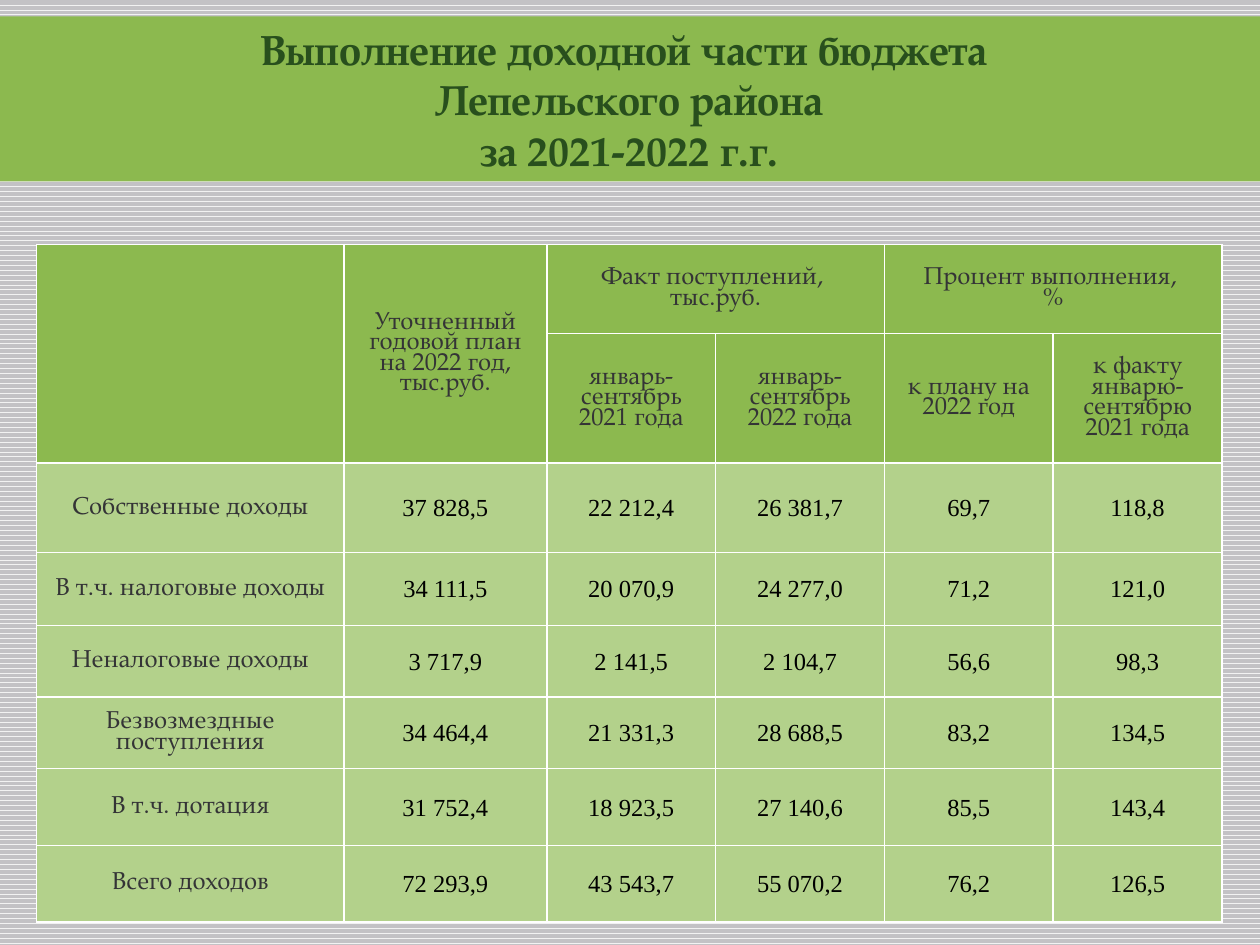
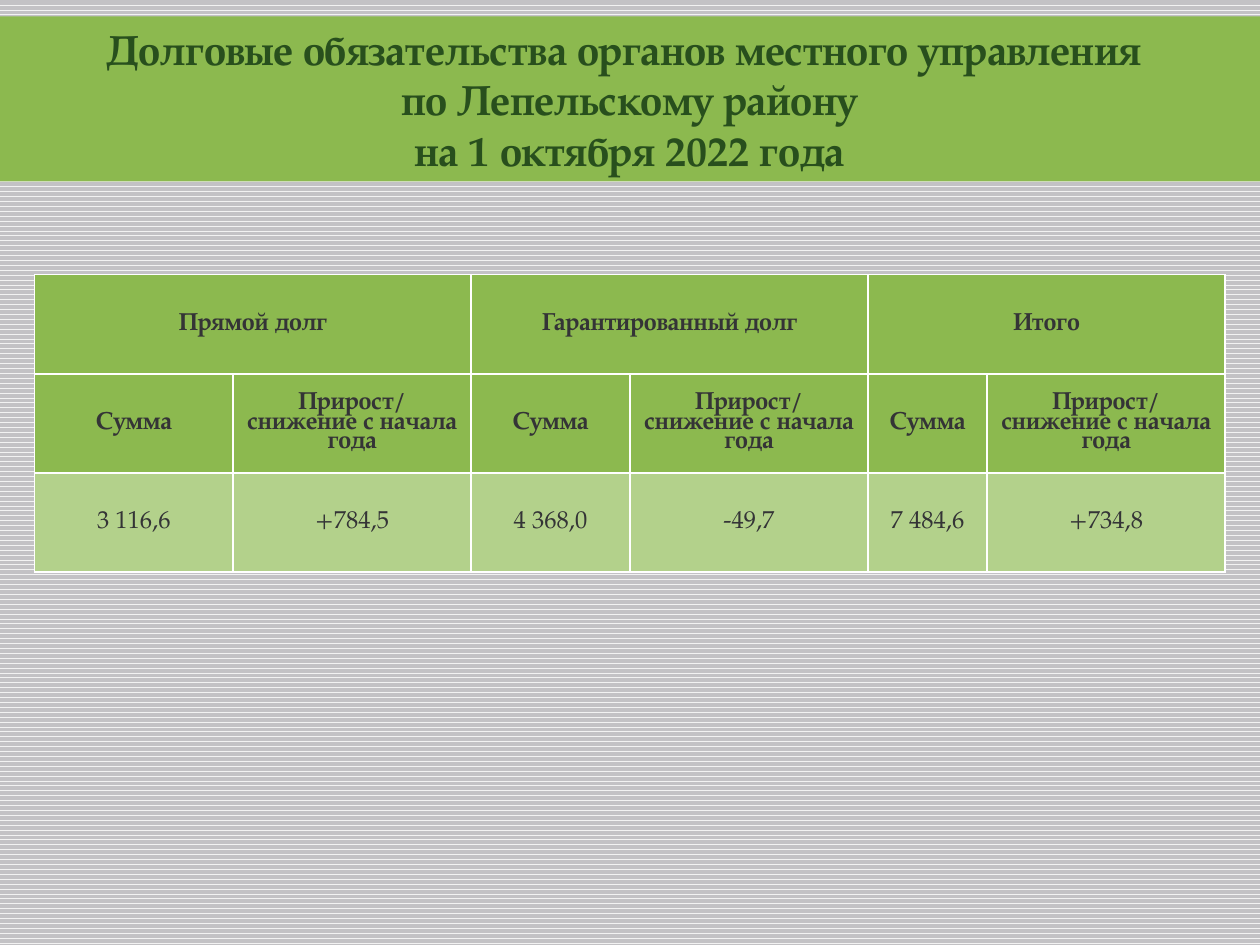
from collections import namedtuple

from lxml.etree import SubElement
from pptx import Presentation
from pptx.dml.color import RGBColor
from pptx.enum.dml import MSO_PATTERN
from pptx.enum.shapes import MSO_SHAPE
from pptx.enum.text import MSO_ANCHOR, MSO_AUTO_SIZE, PP_ALIGN
from pptx.oxml.ns import qn
from pptx.util import Inches, Pt

GREEN = RGBColor(0x8C, 0xB9, 0x4F)
LIGHT_GREEN = RGBColor(0xB3, 0xD1, 0x8B)
DARK_GREEN = RGBColor(0x28, 0x4F, 0x1D)
INK = RGBColor(0x34, 0x34, 0x36)
BLACK = RGBColor(0x00, 0x00, 0x00)
WHITE = RGBColor(0xFF, 0xFF, 0xFF)
STRIPE = RGBColor(0xF2, 0xF2, 0xF2)
GREY = RGBColor(0xC3, 0xC2, 0xC5)

SERIF = "TeX Gyre Pagella"
FIGURES = "Times New Roman"
WIDTH, HEIGHT = Inches(10), Inches(7.5)

Box = namedtuple("Box", "left top width height")


def share_box(left, top, width, height):
    return Box(int(left * WIDTH), int(top * HEIGHT),
               int(width * WIDTH), int(height * HEIGHT))


BANNER = share_box(-0.001, 0.0173, 1.001, 0.1747)
INCOME_BOX = share_box(0.029, 0.2587, 0.941, 0.7173)
DEBT_BOX = share_box(0.0275, 0.2907, 0.945, 0.3147)

INCOME_COLUMNS = [2.44, 1.61] + [1.34] * 4
INCOME_ROWS = [0.71, 1.03, 0.71, 0.58, 0.57, 0.57, 0.61, 0.61]
INCOME_HEADS = {
    (0, 0, 2, 1): "",
    (0, 1, 2, 1): "Уточненный годовой план на 2022 год, тыс.руб.",
    (0, 2, 1, 2): "Факт поступлений, \nтыс.руб.",
    (0, 4, 1, 2): "Процент выполнения, \n%",
    (1, 2, 1, 1): "январь-сентябрь 2021 года",
    (1, 3, 1, 1): "январь-сентябрь 2022 года",
    (1, 4, 1, 1): "к плану на 2022 год",
    (1, 5, 1, 1): "к факту январю-сентябрю 2021 года",
}
INCOME = [
    ("Собственные доходы", "37 828,5", "22 212,4", "26 381,7", "69,7", "118,8"),
    ("В т.ч. налоговые доходы", "34 111,5", "20 070,9", "24 277,0", "71,2", "121,0"),
    ("Неналоговые доходы", "3 717,9", "2 141,5", "2 104,7", "56,6", "98,3"),
    ("Безвозмездные поступления", "34 464,4", "21 331,3", "28 688,5", "83,2", "134,5"),
    ("В т.ч. дотация", "31 752,4", "18 923,5", "27 140,6", "85,5", "143,4"),
    ("Всего доходов", "72 293,9", "43 543,7", "55 070,2", "76,2", "126,5"),
]

DEBT_COLUMNS = [5, 6, 4, 6, 3, 6]
DEBT_ROWS = [1, 1, 1]
DEBT_KINDS = ["Прямой долг", "Гарантированный долг", "Итого"]
DEBT_MEASURES = ["Сумма", "Прирост/снижение с начала года"] * 3
DEBT = ["3 116,6", "+784,5", "4 368,0", "-49,7", "7 484,6", "+734,8"]


def write(frame, text, size=14, font=SERIF, color=INK, bold=False, spacing=None):
    frame.word_wrap = True
    for number, line in enumerate(text.split("\n")):
        paragraph = frame.add_paragraph() if number else frame.paragraphs[0]
        paragraph.alignment = PP_ALIGN.CENTER
        paragraph.line_spacing = spacing
        run = paragraph.add_run()
        run.text = line
        run.font.size = Pt(size)
        run.font.name = font
        run.font.bold = bold
        run.font.color.rgb = color


def add_striped_slide(deck):
    slide = deck.slides.add_slide(deck.slide_layouts[6])
    stripes = slide.background.fill
    stripes.patterned()
    stripes.pattern = MSO_PATTERN.WAVE
    stripes.fore_color.rgb = STRIPE
    stripes.back_color.rgb = GREY
    return slide


def place_banner(slide, box, heading):
    banner = slide.shapes.add_shape(MSO_SHAPE.RECTANGLE, *box)
    banner.shadow.inherit = False
    banner.fill.solid()
    banner.fill.fore_color.rgb = GREEN
    banner.line.fill.background()
    write(banner.text_frame, heading, size=24, color=DARK_GREEN, bold=True)
    banner.text_frame.vertical_anchor = MSO_ANCHOR.MIDDLE
    banner.text_frame.auto_size = MSO_AUTO_SIZE.SHAPE_TO_FIT_TEXT


def paint_cell(cell, color):
    properties = cell._tc.get_or_add_tcPr()
    for side in ("lnL", "lnR", "lnT", "lnB"):
        border = SubElement(properties, qn(f"a:{side}"), w=str(Pt(1)))
        fill = SubElement(border, qn("a:solidFill"))
        SubElement(fill, qn("a:srgbClr"), val=str(WHITE))
    cell.fill.solid()
    cell.fill.fore_color.rgb = color
    cell.vertical_anchor = MSO_ANCHOR.MIDDLE


def place_grid(slide, box, columns, rows, head_rows):
    grid = slide.shapes.add_table(len(rows), len(columns), *box).table
    for column, weight in zip(grid.columns, columns):
        column.width = int(box.width * weight / sum(columns))
    for number, (row, weight) in enumerate(zip(grid.rows, rows)):
        row.height = int(box.height * weight / sum(rows))
        for cell in row.cells:
            paint_cell(cell, GREEN if number < head_rows else LIGHT_GREEN)
    return grid


def place_income(slide, box):
    grid = place_grid(slide, box, INCOME_COLUMNS, INCOME_ROWS, head_rows=2)
    for (row, column, down, across), head in INCOME_HEADS.items():
        cell = grid.cell(row, column)
        if down * across > 1:
            cell.merge(grid.cell(row + down - 1, column + across - 1))
        if head:
            write(cell.text_frame, head, spacing=0.83)
    for row, (source, *amounts) in enumerate(INCOME, start=2):
        write(grid.cell(row, 0).text_frame, source, spacing=0.83)
        for column, amount in enumerate(amounts, start=1):
            cell = grid.cell(row, column)
            cell.margin_left = cell.margin_right = cell.margin_top = Inches(0.01)
            cell.margin_bottom = 0
            write(cell.text_frame, amount, font=FIGURES, color=BLACK)


def place_debt(slide, box):
    grid = place_grid(slide, box, DEBT_COLUMNS, DEBT_ROWS, head_rows=2)
    for number, kind in enumerate(DEBT_KINDS):
        cell = grid.cell(0, 2 * number)
        cell.merge(grid.cell(0, 2 * number + 1))
        write(cell.text_frame, kind, bold=True, spacing=0.8)
    for column, (measure, amount) in enumerate(zip(DEBT_MEASURES, DEBT)):
        write(grid.cell(1, column).text_frame, measure, bold=True, spacing=0.8)
        write(grid.cell(2, column).text_frame, amount, spacing=0.8)


def main():
    deck = Presentation()
    deck.slide_width, deck.slide_height = WIDTH, HEIGHT

    income = add_striped_slide(deck)
    place_banner(income, BANNER, "Выполнение доходной части бюджета \n"
                                 "Лепельского района\nза 2021-2022 г.г.")
    place_income(income, INCOME_BOX)

    debt = add_striped_slide(deck)
    place_debt(debt, DEBT_BOX)
    place_banner(debt, BANNER, "Долговые обязательства органов местного управления \n"
                               "по Лепельскому району\nна 1 октября 2022 года")
    deck.save("out.pptx")


if __name__ == "__main__":
    main()
